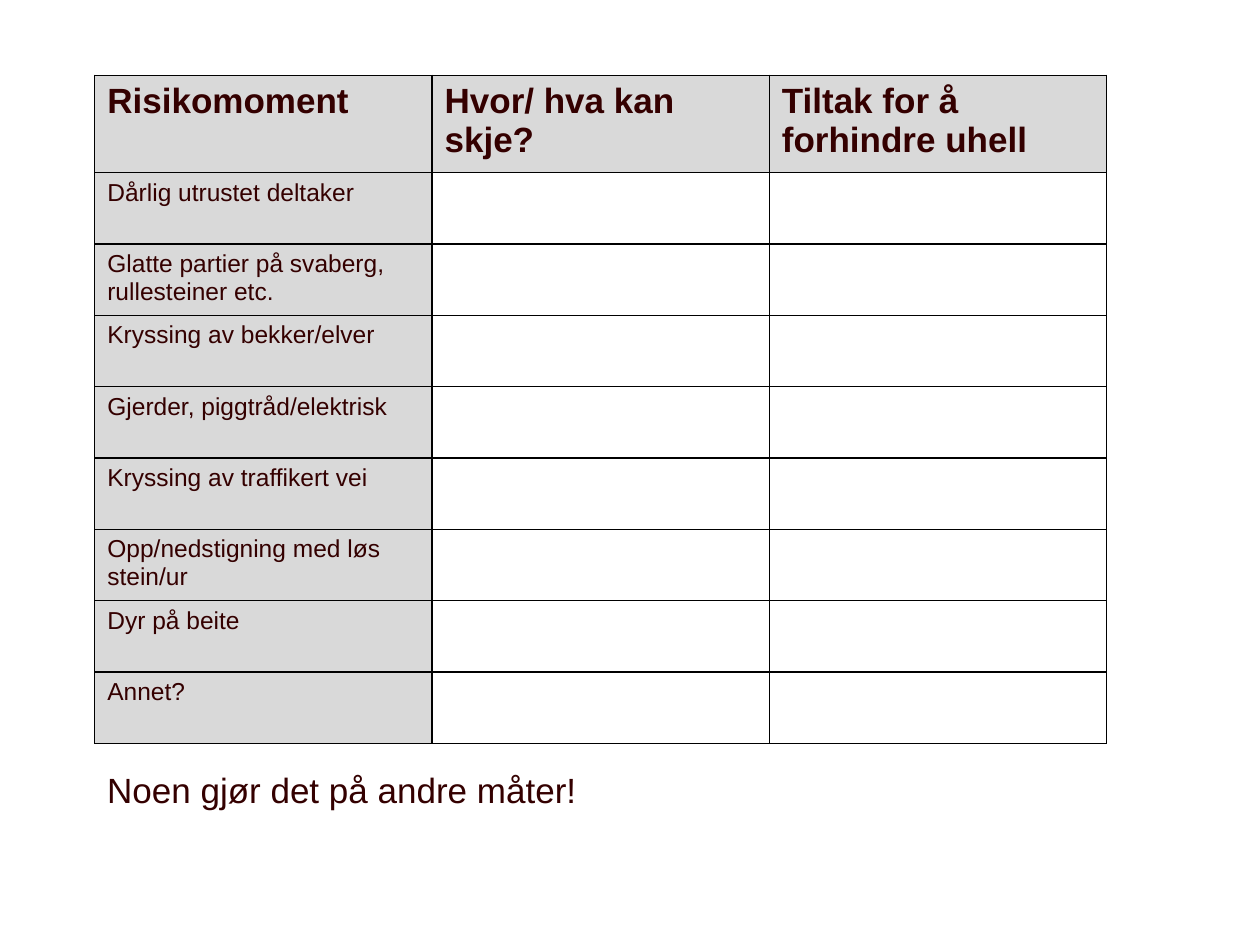
from dataclasses import dataclass

from lxml.etree import SubElement
from pptx import Presentation
from pptx.dml.color import RGBColor
from pptx.enum.text import MSO_AUTO_SIZE
from pptx.oxml.ns import qn
from pptx.util import Cm, Pt


@dataclass(frozen=True)
class Theme:
    font: str = "Arial"
    ink: str = "340000"
    shade: str = "D9D9D9"
    rule: str = "000000"
    rule_width: int = Pt(1)
    large: int = Pt(20)
    small: int = Pt(14)


THEME = Theme()
HEADINGS = ["Risikomoment", "Hvor/ hva kan skje?", "Tiltak for å forhindre uhell"]
RISKS = [
    "Dårlig utrustet deltaker",
    "Glatte partier på svaberg, rullesteiner etc.",
    "Kryssing av bekker/elver",
    "Gjerder, piggtråd/elektrisk",
    "Kryssing av traffikert vei",
    "Opp/nedstigning med løs stein/ur",
    "Dyr på beite",
    "Annet?",
]
HEADING_HEIGHT = Cm(1.96)


def write(frame, wording, size, bold=False):
    run = frame.paragraphs[0].add_run()
    run.text = wording
    formats = {"name": THEME.font, "size": size, "bold": bold}
    for attribute, value in formats.items():
        setattr(run.font, attribute, value)
    run.font.color.rgb = RGBColor.from_string(THEME.ink)


def add_borders(cell):
    properties = cell._tc.get_or_add_tcPr()
    # Borders must come before the fill in the cell properties
    for position, side in enumerate(("a:lnL", "a:lnR", "a:lnT", "a:lnB")):
        border = SubElement(properties, qn(side), w=str(THEME.rule_width))
        properties.insert(position, border)
        fill = SubElement(border, qn("a:solidFill"))
        SubElement(fill, qn("a:srgbClr"), val=THEME.rule)


def add_risk_table(slide, left, top, width, height):
    rows, columns = len(RISKS) + 1, len(HEADINGS)
    table = slide.shapes.add_table(rows, columns, left, top, width, height).table
    table.horz_banding = False

    # Equal columns, and equal risk rows below the heading
    for column in table.columns:
        column.width = width // columns
    for row in table.rows:
        row.height = (height - HEADING_HEIGHT) // len(RISKS)
    table.rows[0].height = HEADING_HEIGHT

    # Shade the heading row and the risk column; leave the answers open
    for row_index in range(rows):
        for column_index in range(columns):
            cell = table.cell(row_index, column_index)
            if row_index == 0 or column_index == 0:
                cell.fill.solid()
                cell.fill.fore_color.rgb = RGBColor.from_string(THEME.shade)
            else:
                cell.fill.background()
            add_borders(cell)

    for column_index, heading in enumerate(HEADINGS):
        write(table.cell(0, column_index).text_frame, heading, THEME.large, bold=True)
    for row_index, risk in enumerate(RISKS, start=1):
        write(table.cell(row_index, 0).text_frame, risk, THEME.small)


def add_closing_remark(slide, left, top, width, height):
    remark = slide.shapes.add_textbox(left, top, width, height).text_frame
    remark.word_wrap = False
    remark.auto_size = MSO_AUTO_SIZE.SHAPE_TO_FIT_TEXT
    write(remark, "Noen gjør det på andre måter!", THEME.large)


def main():
    presentation = Presentation()
    presentation.slide_width, presentation.slide_height = Cm(25.4), Cm(19.05)
    slide = presentation.slides.add_slide(presentation.slide_layouts[6])

    margin = Cm(1.91)
    add_risk_table(slide, margin, Cm(1.52), Cm(20.4), Cm(13.47))
    add_closing_remark(slide, margin, Cm(15.37), Cm(10.03), Cm(1.11))
    presentation.save("out.pptx")


if __name__ == "__main__":
    main()
